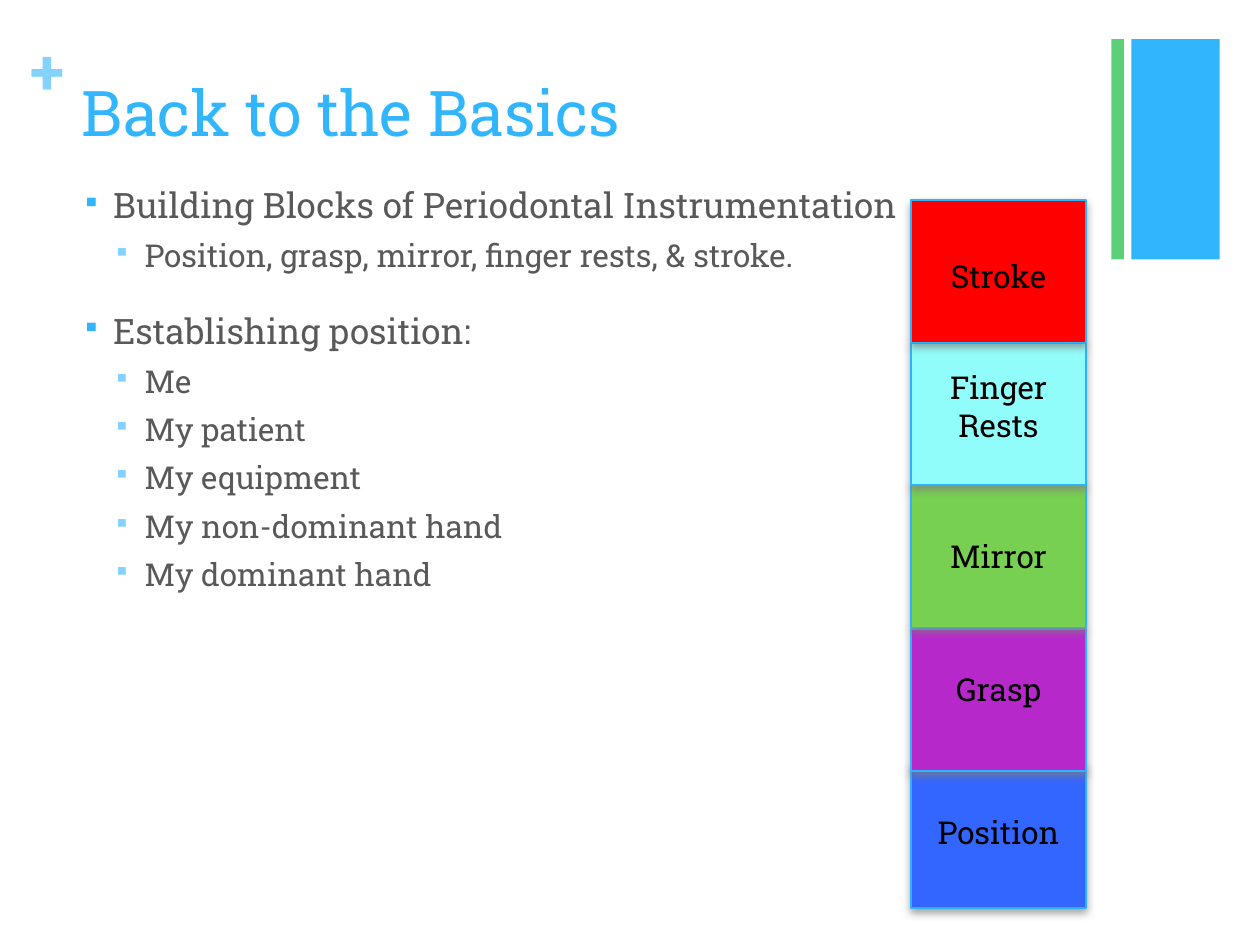
from lxml import etree
from pptx import Presentation
from pptx import util as u
from pptx.dml.color import RGBColor
from pptx.enum import shapes, text
from pptx.oxml.ns import qn

BLUE, PALE, GREEN = "31B6FD", "83D3FE", "5BD078"
GRAY, BLACK, EDGE = "595959", "000000", "2BB4FC"


def color(code):
    return RGBColor.from_string(code)


def node(parent, tag, **attrs):
    return etree.SubElement(parent, qn(tag), attrs)


class Deck:
    font = "Roboto Slab"

    def __init__(self, slide):
        self.slide = slide

    def run(self, para, words, size, code, bold=False):
        run = para.add_run()
        run.text = words
        run.font.name = self.font
        run.font.size = u.Pt(size)
        run.font.bold = bold
        run.font.color.rgb = color(code)

    def title(self, words, *box):
        shape = self.slide.shapes.title
        shape.left, shape.top, shape.width, shape.height = map(u.Inches, box)
        frame = shape.text_frame
        frame.word_wrap = True
        frame.auto_size = text.MSO_AUTO_SIZE.NONE
        frame.vertical_anchor = text.MSO_ANCHOR.TOP
        frame.paragraphs[0].alignment = text.PP_ALIGN.LEFT
        self.run(frame.paragraphs[0], words, 36, BLUE)

    def rect(self, fill, *box):
        shape = self.slide.shapes.add_shape(
            shapes.MSO_SHAPE.RECTANGLE, *map(u.Inches, box))
        shape.shadow.inherit = False
        shape.fill.solid()
        shape.fill.fore_color.rgb = color(fill)
        shape.line.fill.background()
        return shape

    def block(self, fill, *box):
        shape = self.rect(fill, *box)
        shape.line.color.rgb = color(EDGE)
        shape.line.width = u.Pt(1)
        effects = shape._element.spPr.find(qn("a:effectLst"))
        shade = node(effects, "a:outerShdw", blurRad=str(u.Pt(5)),
                     dist=str(u.Pt(2)), dir="5400000", rotWithShape="0")
        tone = node(shade, "a:srgbClr", val="808080")
        node(tone, "a:alpha", val="75000")

    def frame(self, *box):
        frame = self.slide.shapes.add_textbox(*map(u.Inches, box)).text_frame
        frame.word_wrap = True
        return frame

    def label(self, words, *box):
        para = self.frame(*box).paragraphs[0]
        para.alignment = text.PP_ALIGN.CENTER
        self.run(para, words, 18, BLACK)

    def plus(self, *box):
        frame = self.frame(*box)
        frame.margin_left = frame.margin_right = 0
        frame.margin_top = frame.margin_bottom = 0
        self.run(frame.paragraphs[0], "+", 36, PALE, True)

    def bullets(self, items, *box):
        frame = self.frame(*box)
        for i, (level, words) in enumerate(items):
            para = frame.add_paragraph() if i else frame.paragraphs[0]
            para.level = level
            para.space_before = u.Pt(6 if level else 20)
            props = para._p.get_or_add_pPr()
            props.set("marL", str(u.Inches(0.25 * (level + 1))))
            props.set("indent", str(u.Inches(-0.25)))
            node(node(props, "a:buClr"), "a:srgbClr",
                 val=PALE if level else BLUE)
            node(props, "a:buSzPct", val="75000")
            node(props, "a:buChar", char="▪")
            self.run(para, words, 18 if level else 20, GRAY)


def main():
    prs = Presentation()
    prs.slide_width, prs.slide_height = u.Inches(10), u.Inches(7.5)
    deck = Deck(prs.slides.add_slide(prs.slide_layouts[5]))

    # Corner bars and plus sign
    deck.rect(BLUE, 8.98, 0.31, 0.7, 1.75)
    deck.plus(0.24, 0.25, 0.29, 0.61)
    deck.rect(GREEN, 8.82, 0.31, 0.1, 1.75)

    # Title and outline
    deck.title("Back to the Basics", 0.55, 0.53, 8.26, 1.22)
    deck.bullets([
        (0, "Building Blocks of Periodontal Instrumentation"),
        (1, "Position, grasp, mirror, finger rests, & stroke."),
        (0, "Establishing position:"),
        (1, "Me"),
        (1, "My patient"),
        (1, "My equipment"),
        (1, "My non-dominant hand"),
        (1, "My dominant hand"),
    ], 0.55, 1.41, 8.26, 5.8)

    # Tower of blocks, bottom up, then its labels
    left, wide, high = 7.23, 1.39, 1.13
    tower = [  # name, fill, block top, label top, label height
        ("Position", "3366FF", 6.08, 6.4, 0.4),
        ("Grasp", "B728CB", 4.99, 5.27, 0.4),
        ("Mirror", "78D052", 3.85, 4.21, 0.4),
        ("Finger Rests", "91FDFA", 2.72, 2.87, 0.71),
        ("Stroke", "FF0000", 1.59, 1.99, 0.4),
    ]
    for name, fill, top, *rest in tower:
        deck.block(fill, left, top, wide, high)
    for name, fill, top, y, tall in tower:
        inset = 0.15 if name in ("Grasp", "Stroke") else 0
        deck.label(name, left + inset, y, wide - 2 * inset, tall)

    prs.save("out.pptx")


if __name__ == "__main__":
    main()
